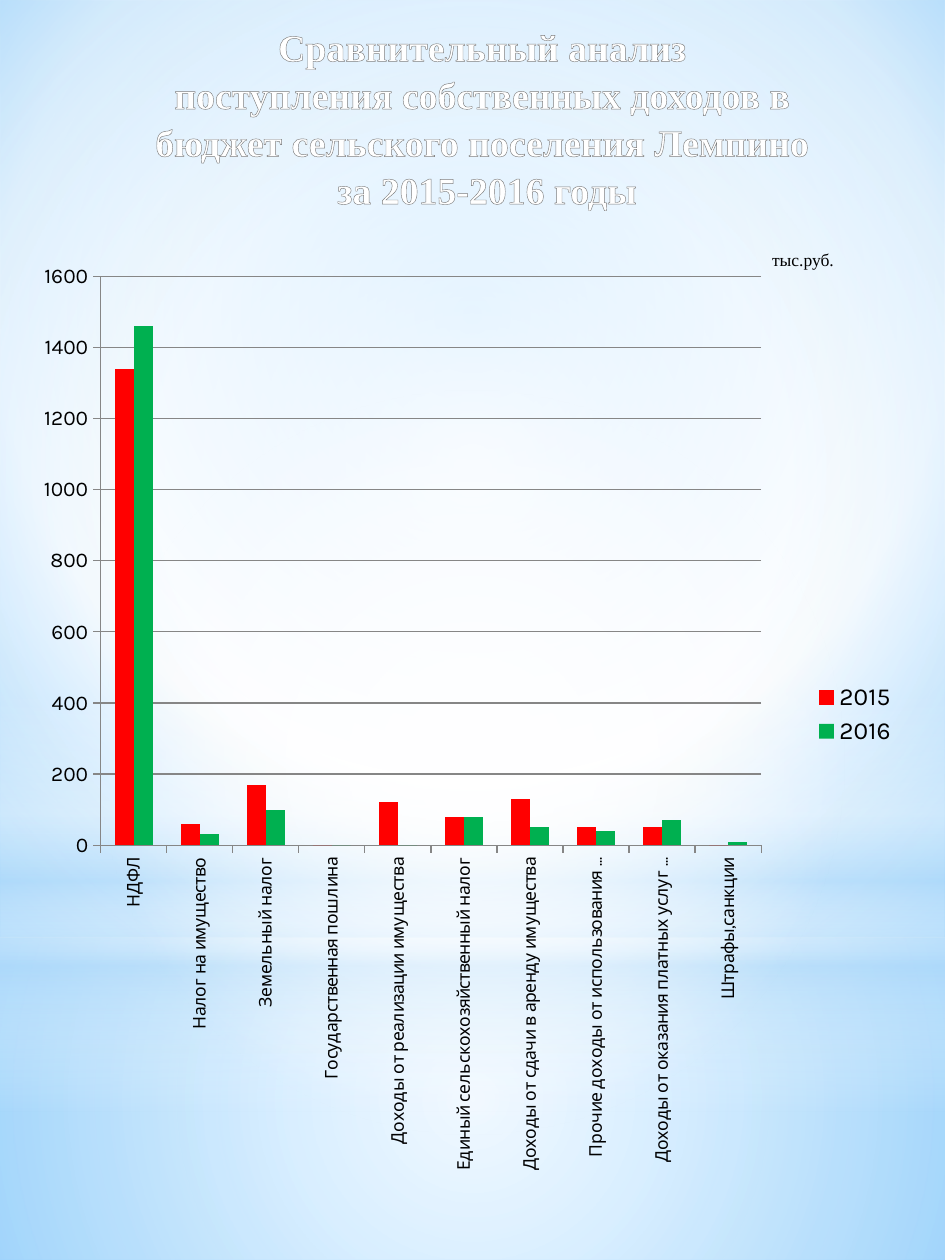
from dataclasses import dataclass

from lxml import etree
from pptx import Presentation
from pptx import util as u
from pptx.chart.data import CategoryChartData
from pptx.dml.color import RGBColor
from pptx.enum import chart as charts, shapes, text
from pptx.oxml import parse_xml
from pptx.oxml.ns import nsdecls, qn


@dataclass(frozen=True)
class Theme:
    white: str = "FFFFFF"
    haze: str = "B4DCFA"
    sky: str = "9ED5FF"
    deep_sky: str = "5BB9FF"
    title_shade: str = "7F7F7F"
    outline: str = "7D7D7D"
    ink: str = "000000"
    grid: str = "868686"
    series: tuple[str, ...] = ("FF0000", "00B050")
    serif: str = "Times New Roman"
    sans: str = "Karla"
    title_size: float = 21.6
    unit_size: float = 10
    category_size: float = 10
    value_size: float = 12
    legend_size: float = 14


THEME = Theme()


@dataclass(frozen=True)
class Stop:
    position: int
    color: str
    opacity: int = 100


@dataclass(frozen=True)
class Gradient:
    """Linear when an angle is given, otherwise circular around a focus (l, t, r, b in percent)."""
    stops: tuple[Stop, ...]
    angle: int | None = None
    focus: tuple[int, int, int, int] = (50, 50, 50, 50)


@dataclass(frozen=True)
class Glow:
    top: float
    height: float
    gradient: Gradient
    kind: shapes.MSO_SHAPE = shapes.MSO_SHAPE.RECTANGLE


WHITE, HAZE = THEME.white, THEME.haze
SKY = Gradient((Stop(0, THEME.sky), Stop(60, WHITE), Stop(100, THEME.deep_sky)),
               focus=(20, 10, 20, 60))
TITLE_FILL = Gradient((Stop(0, WHITE), Stop(9, WHITE), Stop(50, THEME.title_shade),
                       Stop(79, WHITE), Stop(100, WHITE)), angle=90)
GLOWS = (
    Glow(7.44, 2.56, Gradient((Stop(0, WHITE, 91), Stop(37, WHITE, 76), Stop(100, HAZE, 79)))),
    Glow(0, 7.44, Gradient((Stop(0, WHITE, 89), Stop(48, WHITE, 62), Stop(100, HAZE, 79)))),
    Glow(5.49, 3.33, Gradient((Stop(0, WHITE, 0), Stop(29, WHITE, 30), Stop(45, HAZE, 40),
                               Stop(55, WHITE, 26), Stop(65, HAZE, 60), Stop(100, WHITE, 0)), 90)),
    Glow(2.33, 7.44, Gradient((Stop(0, WHITE), Stop(56, WHITE, 0), Stop(100, WHITE, 0))),
         shapes.MSO_SHAPE.OVAL),
)
TITLE_LINES = (
    "Сравнительный анализ ",
    "поступления собственных доходов в ",
    "бюджет сельского поселения Лемпино ",
    "за 2015-2016 годы",
)
REVENUE = {
    "НДФЛ": (1340, 1460),
    "Налог на имущество": (60, 30),
    "Земельный налог": (170, 100),
    "Государственная пошлина": (0, 0),
    "Доходы от реализации имущества": (120, 0),
    "Единый сельскохозяйственный налог": (80, 80),
    "Доходы от сдачи в аренду имущества": (130, 50),
    "Прочие доходы от использования имущества": (50, 40),
    "Доходы от оказания платных услуг и компенсации затрат": (50, 70),
    "Штрафы,санкции": (0, 10),
}
YEARS = ("2015", "2016")


def assign(target, values: dict) -> None:
    for name, value in values.items():
        setattr(target, name, value)


def inches(*lengths: float) -> list:
    return [u.Inches(length) for length in lengths]


def style_font(font, size: float, face: str, color: str | None = THEME.ink, bold: bool = False) -> None:
    assign(font, {"size": u.Pt(size), "name": face, "bold": bold})
    if color:
        font.color.rgb = RGBColor.from_string(color)


def gradient_element(gradient: Gradient):
    stops = "".join(
        f'<a:gs pos="{stop.position * 1000}"><a:srgbClr val="{stop.color}">'
        f'<a:alpha val="{stop.opacity * 1000}"/></a:srgbClr></a:gs>'
        for stop in gradient.stops)
    if gradient.angle is None:
        sides = " ".join(f'{side}="{part * 1000}"' for side, part in zip("ltrb", gradient.focus))
        course = f'<a:path path="circle"><a:fillToRect {sides}/></a:path>'
    else:
        course = f'<a:lin ang="{gradient.angle * 60000}" scaled="0"/>'
    return parse_xml(f'<a:gradFill {nsdecls("a")} rotWithShape="1">'
                     f'<a:gsLst>{stops}</a:gsLst>{course}</a:gradFill>')


def apply_gradient(fill, properties, gradient: Gradient) -> None:
    """Put the gradient where a plain fill of the same owner would stand."""
    fill.solid()
    plain = properties.find(qn("a:solidFill"))
    properties.replace(plain, gradient_element(gradient))


def draw_backdrop(page, width: int) -> None:
    fill = page.background.fill
    fill.solid()
    apply_gradient(fill, page.element.xpath(".//p:bgPr")[0], SKY)
    for glow in GLOWS:
        shape = page.shapes.add_shape(glow.kind, 0, u.Inches(glow.top), width, u.Inches(glow.height))
        shape.shadow.inherit = False
        shape.line.fill.background()
        apply_gradient(shape.fill, shape.element.spPr, glow.gradient)


def draw_chart(page) -> None:
    data = CategoryChartData()
    data.categories = list(REVENUE)
    for year, values in zip(YEARS, zip(*REVENUE.values())):
        data.add_series(year, values)
    chart = page.shapes.add_chart(charts.XL_CHART_TYPE.COLUMN_CLUSTERED,
                                  *inches(0.21, 2.01, 7.01, 7.32), data).chart
    assign(chart, {"has_title": False, "has_legend": True})
    style_font(chart.font, 18, THEME.sans)
    assign(chart.legend, {"position": charts.XL_LEGEND_POSITION.RIGHT, "include_in_layout": False})
    style_font(chart.legend.font, THEME.legend_size, THEME.sans)

    plot = chart.plots[0]
    assign(plot, {"gap_width": 150, "overlap": 0, "vary_by_categories": False})
    for series, color in zip(plot.series, THEME.series):
        series.format.fill.solid()
        series.format.fill.fore_color.rgb = RGBColor.from_string(color)

    category, value = chart.category_axis, chart.value_axis
    assign(value, {"minimum_scale": 0, "maximum_scale": 1600, "major_unit": 200,
                   "has_major_gridlines": True})
    for axis, size in ((category, THEME.category_size), (value, THEME.value_size)):
        axis.major_tick_mark = charts.XL_TICK_MARK.OUTSIDE
        style_font(axis.tick_labels.font, size, THEME.sans)
    for line in (category.format.line, value.format.line, value.major_gridlines.format.line):
        line.color.rgb = RGBColor.from_string(THEME.grid)
        line.width = u.Pt(0.75)
    label_body = category.tick_labels.font._element.getparent().getparent().getparent().find(qn("a:bodyPr"))
    assign_xml = {"rot": "-5400000", "vert": "horz"}
    for name, setting in assign_xml.items():
        label_body.set(name, setting)
    place_plot(chart, {"x": 0.084, "y": 0.025, "w": 0.748, "h": 0.617})


def place_plot(chart, frame: dict[str, float]) -> None:
    """Fix the inner plot area, in fractions of the chart."""
    area = chart.element.xpath(".//c:plotArea")[0]
    for old in area.findall(qn("c:layout")):
        area.remove(old)
    layout = etree.Element(qn("c:layout"))
    manual = etree.SubElement(layout, qn("c:manualLayout"))
    settings = {"layoutTarget": "inner", "xMode": "edge", "yMode": "edge", **frame}
    for name, setting in settings.items():
        etree.SubElement(manual, qn(f"c:{name}")).set("val", str(setting))
    area.insert(0, layout)


def draw_title(page) -> None:
    title = page.shapes.title
    page.shapes.element.append(title.element)
    assign(title, dict(zip(("left", "top", "width", "height"), inches(0.52, 0.12, 6.69, 1.56))))
    frame = title.text_frame
    assign(frame, {"word_wrap": True, "vertical_anchor": text.MSO_ANCHOR.TOP,
                   "auto_size": text.MSO_AUTO_SIZE.SHAPE_TO_FIT_TEXT})
    frame.text = "\n".join(TITLE_LINES)
    for para in frame.paragraphs:
        assign(para, {"alignment": text.PP_ALIGN.CENTER, "line_spacing": 1.05})
        span = para.runs[0]
        style_font(span.font, THEME.title_size, THEME.serif, color=None, bold=True)
        properties = span.font._element
        apply_gradient(span.font.fill, properties, TITLE_FILL)
        properties.insert(0, parse_xml(
            f'<a:ln {nsdecls("a")} w="{u.Pt(0.83)}"><a:solidFill>'
            f'<a:srgbClr val="{THEME.outline}"/></a:solidFill></a:ln>'))


def draw_unit(page) -> None:
    box = page.shapes.add_textbox(*inches(6.03, 1.93, 0.7, 0.27))
    box.text_frame.word_wrap = False
    span = box.text_frame.paragraphs[0].add_run()
    span.text = "тыс.руб."
    style_font(span.font, THEME.unit_size, THEME.serif)


def main() -> None:
    deck = Presentation()
    assign(deck, {"slide_width": u.Inches(7.5), "slide_height": u.Inches(10)})
    page = deck.slides.add_slide(deck.slide_layouts[5])
    draw_backdrop(page, deck.slide_width)
    draw_chart(page)
    draw_title(page)
    draw_unit(page)
    deck.save("out.pptx")


if __name__ == "__main__":
    main()
